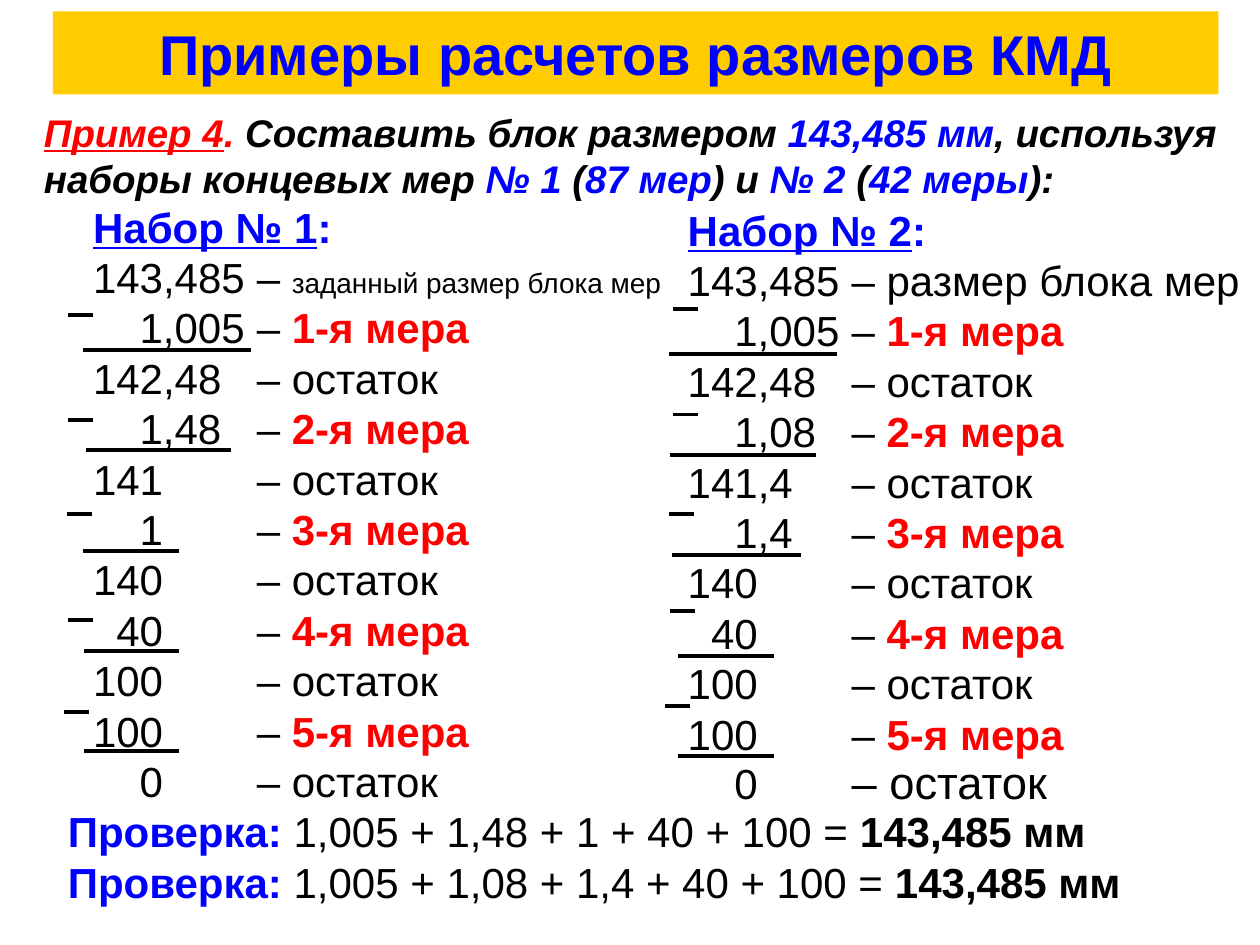
from lxml.etree import SubElement
from pptx import Presentation
from pptx.dml.color import RGBColor
from pptx.enum.shapes import MSO_CONNECTOR, MSO_SHAPE
from pptx.enum.text import MSO_ANCHOR, PP_ALIGN
from pptx.oxml.ns import qn
from pptx.util import Inches, Pt

BLACK = RGBColor(0, 0, 0)
BLUE = RGBColor(0, 0, 255)
RED = RGBColor(255, 0, 0)
GOLD = RGBColor(255, 204, 0)

WIDE, HIGH = Inches(10), Inches(7.5)
COL, ROW = WIDE // 100, HIGH // 75

HEAD = dict(name="Arial", size=Pt(32), bold=True)
TASK = dict(name="Arial", size=Pt(22), bold=True, italic=True)
BOLD = dict(name="Arial", size=Pt(24), bold=True)
BASE = dict(name="Arial", size=Pt(24), bold=False)
NOTE = dict(BASE, size=Pt(16))
LAST = dict(BASE, size=Pt(25.9))
UNDER = dict(underline=True)

EDGE, DIGIT, DASH, CHECK = 3.9, 1.85, 16.9, 1.9
PITCH = Pt(28.8)


def grid(x, y, w, h):
    return round(x * COL), round(y * ROW), round(w * COL), round(h * ROW)


def put(par, text, style, color=BLACK):
    run = par.add_run()
    run.text = text
    for key, val in style.items():
        setattr(run.font, key, val)
    run.font.color.rgb = color


def start(frame, pitch, stops=()):
    par = frame.paragraphs[0]
    if par.runs:
        par = frame.add_paragraph()
    par.line_spacing = pitch
    if stops:
        tabs = SubElement(par._p.get_or_add_pPr(), qn("a:tabLst"))
        for stop in stops:
            SubElement(tabs, qn("a:tab"), pos=str(round(stop * COL)), algn="l")
    return par


def frame_in(slide, box):
    frame = slide.shapes.add_textbox(*grid(*box)).text_frame
    form = dict(word_wrap=True, margin_top=Inches(0.07), margin_right=Inches(0.05))
    for key, val in form.items():
        setattr(frame, key, val)
    return frame


def title(slide, box):
    bar = slide.shapes.add_shape(MSO_SHAPE.RECTANGLE, *grid(*box))
    bar.shadow.inherit = False
    bar.fill.solid()
    bar.fill.fore_color.rgb = GOLD
    bar.line.fill.background()
    bar.text_frame.vertical_anchor = MSO_ANCHOR.MIDDLE
    par = bar.text_frame.paragraphs[0]
    par.alignment = PP_ALIGN.CENTER
    put(par, "Примеры расчетов размеров КМД", HEAD, BLUE)


def task(frame):
    par = start(frame, Pt(26.5))
    put(par, "Пример 4", TASK | UNDER, RED)
    put(par, ". ", TASK, RED)
    for text, color in (
        ("Составить блок размером ", BLACK), ("143,485 мм", BLUE),
        (", используя наборы концевых мер ", BLACK), ("№ 1", BLUE),
        (" (", BLACK), ("87 мер", BLUE), (") и ", BLACK),
        ("№ 2", BLUE), (" (", BLACK), ("42 меры", BLUE), ("):", BLACK),
    ):
        put(par, text, TASK, color)


def line(frame, num):
    lack = 3 - len(num.split(",")[0])
    par = start(frame, PITCH, (EDGE + lack * DIGIT, DASH))
    put(par, f"\t{num}\t", BASE)
    return par


def column(frame, name, rests, sizes, label, small, final):
    par = start(frame, PITCH, (EDGE,))
    put(par, "\t", BOLD, BLUE)
    put(par, name, BOLD | UNDER, BLUE)
    put(par, ":", BOLD, BLUE)
    par = line(frame, rests[0])
    put(par, "– ", BASE)
    put(par, label, small)
    for step, (size, rest) in enumerate(zip(sizes, rests[1:]), 1):
        par = line(frame, size)
        put(par, "– ", BASE)
        put(par, f"{step}-я мера", BOLD, RED)
        par = line(frame, rest)
        put(par, "– остаток", final if rest == "0" else BASE)


def proof(frame, sizes):
    par = start(frame, PITCH, (CHECK,))
    put(par, "\tПроверка: ", BOLD, BLUE)
    put(par, " + ".join(sizes) + " = ", BASE)
    put(par, "143,485 мм", BOLD)


def rule(slide, left, right, y):
    ends = [round(v) for v in (right * COL, y * ROW, left * COL, y * ROW)]
    link = slide.shapes.add_connector(MSO_CONNECTOR.STRAIGHT, *ends)
    link.line.color.rgb = BLACK
    link.line.width = Pt(2.25)
    SubElement(link._element.spPr, qn("a:effectLst"))


def marks(slide, box, signs, bars, top, gap):
    left, head = box[:2]
    for x, y in signs:
        rule(slide, left + x, left + x + 2, head + y)
    for step, (x, end) in enumerate(bars):
        rule(slide, left + x, left + end, head + top + step * gap)


def main():
    deck = Presentation()
    deck.slide_width, deck.slide_height = WIDE, HIGH
    slide = deck.slides.add_slide(deck.slide_layouts[6])
    title(slide, (4.2, 0.9, 92.5, 6.6))

    one = ("1,005", "1,48", "1", "40", "100")
    two = ("1,005", "1,08", "1,4", "40", "100")
    body, side = (2.5, 7.9, 97.5, 67), (49.7, 15.5, 50, 59.5)

    frame = frame_in(slide, body)
    task(frame)
    column(frame, "Набор № 1", ("143,485", "142,48", "141", "140", "100", "0"),
           one, "заданный размер блока мер", NOTE, BASE)
    proof(frame, one)
    proof(frame, two)
    marks(slide, body,
          ((2.9, 17.1), (2.9, 25.4), (2.8, 32.9), (2.9, 41.3), (2.6, 48.6)),
          ((4.1, 17.4), (4.3, 15.8), (4.1, 11.7), (4.2, 11.7), (4.2, 11.7)),
          19.9, 7.95)

    frame = frame_in(slide, side)
    column(frame, "Набор № 2", ("143,485", "142,48", "141,4", "140", "100", "0"),
           two, "размер блока мер", BASE, LAST)
    marks(slide, side,
          ((3.7, 9), (3.7, 17.4), (3.4, 25.3), (3.5, 33), (3.1, 40.5)),
          ((3.4, 16.7), (3.5, 15.1), (3.6, 13.9), (4.1, 11.7), (4.1, 11.7)),
          12.6, 7.98)
    deck.save("out.pptx")


if __name__ == "__main__":
    main()
